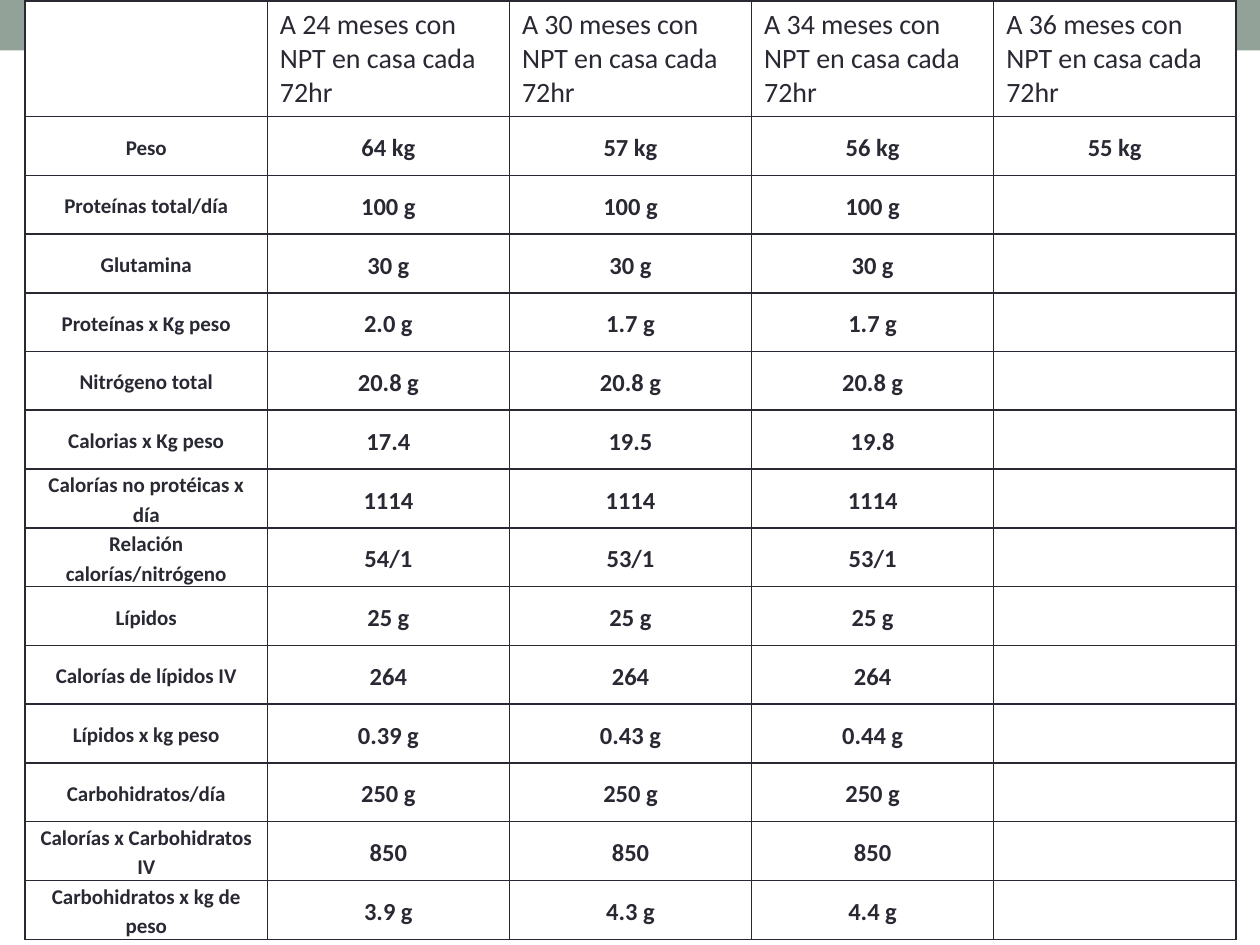
from lxml.etree import SubElement
from pptx import Presentation
from pptx.dml.color import RGBColor
from pptx.enum.shapes import MSO_SHAPE as Shape
from pptx.enum.text import MSO_ANCHOR as Anchor, PP_ALIGN as Align
from pptx.oxml.ns import qn
from pptx.util import Inches, Pt

SLIDE_W, SLIDE_H = 10, 7.5
BAND_H = 0.4
TABLE_LEFT, TABLE_TOP, TABLE_W, TABLE_H = 0.2, 0.01, 9.61, 7.44
HEADER_H = 0.91
INK, PAPER, SAGE = "292934", "FFFFFF", "93A299"
FONT = "Calibri"

MONTHS = (24, 30, 34, 36)
MEASURES = [
    ("Peso", "64 kg", "57 kg", "56 kg", "55 kg"),
    ("Proteínas total/día", "100 g", "100 g", "100 g"),
    ("Glutamina", "30 g", "30 g", "30 g"),
    ("Proteínas x Kg peso", "2.0 g", "1.7 g", "1.7 g"),
    ("Nitrógeno total", "20.8 g", "20.8 g", "20.8 g"),
    ("Calorias x Kg peso", "17.4", "19.5", "19.8"),
    ("Calorías no protéicas x día", "1114", "1114", "1114"),
    ("Relación calorías/nitrógeno", "54/1", "53/1", "53/1"),
    ("Lípidos", "25 g", "25 g", "25 g"),
    ("Calorías de lípidos IV", "264", "264", "264"),
    ("Lípidos x kg peso", "0.39 g", "0.43 g", "0.44 g"),
    ("Carbohidratos/día", "250 g", "250 g", "250 g"),
    ("Calorías x Carbohidratos IV", "850", "850", "850"),
    ("Carbohidratos x kg de peso", "3.9 g", "4.3 g", "4.4 g"),
]


def paint(color_format, hex_color):
    color_format.rgb = RGBColor.from_string(hex_color)


def fill_with(fill, hex_color):
    fill.solid()
    paint(fill.fore_color, hex_color)


def add_band(slide):
    band = slide.shapes.add_shape(
        Shape.RECTANGLE, 0, 0, Inches(SLIDE_W), Inches(BAND_H))
    band.shadow.inherit = False
    fill_with(band.fill, SAGE)
    band.line.fill.background()


def add_borders(cell, width=1):
    properties = cell._tc.get_or_add_tcPr()
    for side in ("a:lnL", "a:lnR", "a:lnT", "a:lnB"):
        border = SubElement(properties, qn(side), w=str(Pt(width)))
        ink = SubElement(border, qn("a:solidFill"))
        SubElement(ink, qn("a:srgbClr"), val=INK)


def write(cell, text, size, bold):
    paragraph = cell.text_frame.paragraphs[0]
    run = paragraph.add_run()
    run.text = text
    run.font.name, run.font.size, run.font.bold = FONT, Pt(size), bold
    paint(run.font.color, INK)
    return paragraph


def write_measure(cell, text, size):
    cell.vertical_anchor = Anchor.MIDDLE
    cell.margin_left = cell.margin_right = Inches(0.07)
    cell.margin_top = cell.margin_bottom = 0
    paragraph = write(cell, text, size, bold=True)
    paragraph.alignment = Align.CENTER
    paragraph.line_spacing = 1.15
    paragraph.space_after = Pt(10)


def add_nutrition_table(slide):
    row_count, column_count = len(MEASURES) + 1, len(MONTHS) + 1
    table = slide.shapes.add_table(
        row_count, column_count, Inches(TABLE_LEFT), Inches(TABLE_TOP),
        Inches(TABLE_W), Inches(TABLE_H)).table
    table.first_row = table.horz_banding = False

    # Grid: equal columns, a tall header, equal rows below it
    for column in table.columns:
        column.width = Inches(TABLE_W / column_count)
    for row in table.rows:
        row.height = Inches((TABLE_H - HEADER_H) / len(MEASURES))
    table.rows[0].height = Inches(HEADER_H)
    for cell in table.iter_cells():
        add_borders(cell)
        fill_with(cell.fill, PAPER)

    # Header: months on home parenteral nutrition
    for column, month in enumerate(MONTHS, 1):
        write(table.cell(0, column),
              f"A {month} meses con NPT en casa cada 72hr", 16, bold=False)

    # Body: measure names, then their values
    for row, measure in enumerate(MEASURES, 1):
        for column, text in enumerate(measure):
            write_measure(table.cell(row, column), text, 14 if column else 12)


def main():
    deck = Presentation()
    deck.slide_width, deck.slide_height = Inches(SLIDE_W), Inches(SLIDE_H)
    slide = deck.slides.add_slide(deck.slide_layouts[6])
    fill_with(slide.background.fill, PAPER)
    add_band(slide)
    add_nutrition_table(slide)
    deck.save("out.pptx")


if __name__ == "__main__":
    main()
